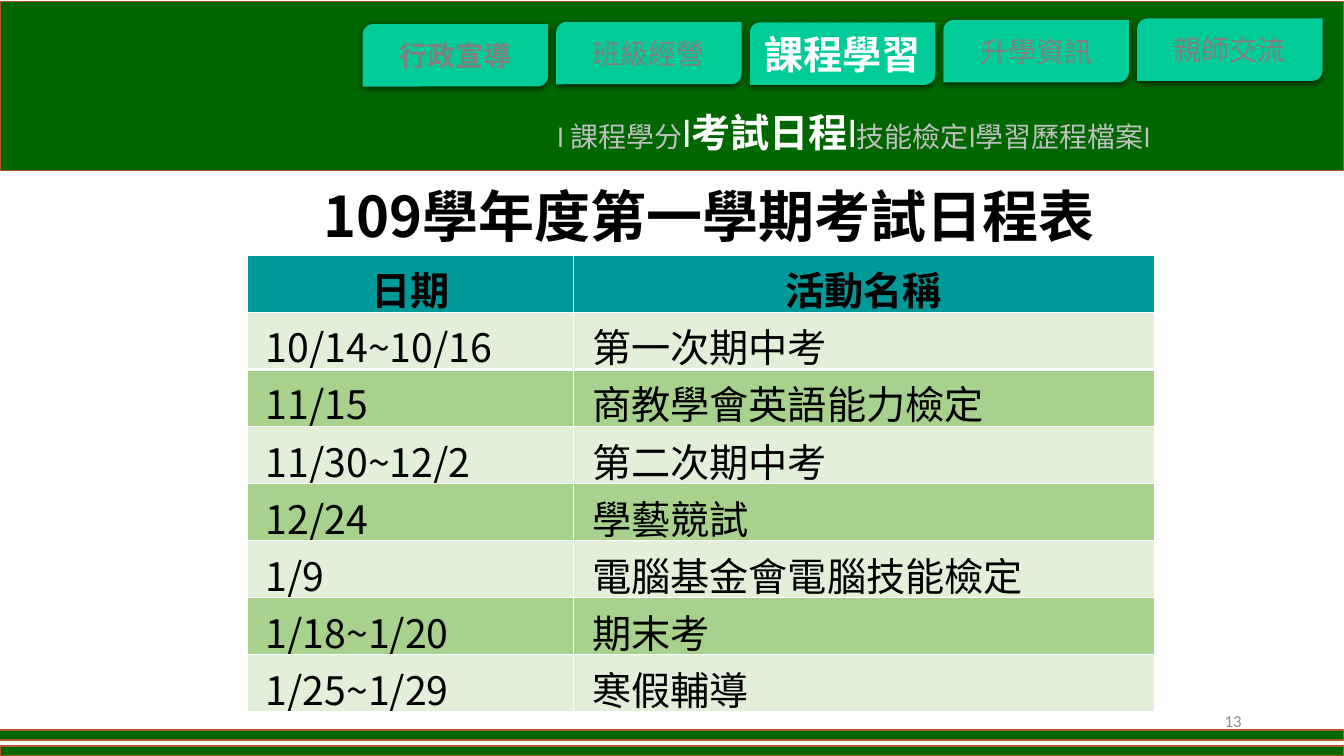
from dataclasses import dataclass

from lxml.etree import SubElement
from pptx import Presentation
from pptx.dml.color import RGBColor
from pptx.enum.shapes import MSO_SHAPE
from pptx.enum.text import MSO_ANCHOR, MSO_AUTO_SIZE, PP_ALIGN
from pptx.oxml.ns import qn
from pptx.util import Pt


@dataclass(frozen=True)
class Theme:
    band: str = "006600"
    band_line: str = "AF5C24"
    tab: str = "00CC99"
    tab_text: str = "808080"
    active: str = "FFFFFF"
    menu_text: str = "BFBFBF"
    header: str = "009999"
    light_row: str = "E2F0D9"
    dark_row: str = "A9D18E"
    border: str = "FFFFFF"
    ink: str = "000000"
    number: str = "8C8C8C"
    cjk: str = "Noto Sans CJK SC"
    latin: str = "Calibri"
    title_size: float = 40
    large: float = 28
    small: float = 20
    number_size: float = 12


class SlideBuilder:
    def __init__(self, slide, theme):
        self.slide = slide
        self.theme = theme

    def span(self, para, text, size, color, bold=False, font=None):
        run = para.add_run()
        run.text = text
        run.font.size = Pt(size)
        run.font.bold = bold
        run.font.color.rgb = RGBColor.from_string(color)
        run.font.name = font or self.theme.cjk
        SubElement(run.font._element, qn("a:ea"), typeface=run.font.name)

    def shape(self, kind, left, top, width, height, fill):
        shape = self.slide.shapes.add_shape(kind, Pt(left), Pt(top), Pt(width), Pt(height))
        shape.shadow.inherit = False
        shape.fill.solid()
        shape.fill.fore_color.rgb = RGBColor.from_string(fill)
        return shape

    def band(self, left, top, height):
        band = self.shape(MSO_SHAPE.RECTANGLE, left, top, 960, height, self.theme.band)
        band.line.color.rgb = RGBColor.from_string(self.theme.band_line)
        band.line.width = Pt(1)

    def tab(self, left, top, text, size, color, bold):
        tab = self.shape(MSO_SHAPE.ROUND_2_DIAG_RECTANGLE, left, top, 132.5, 44.6, self.theme.tab)
        tab.line.fill.background()
        effects = tab._element.spPr.find(qn("a:effectLst"))
        shadow = SubElement(effects, qn("a:outerShdw"), blurRad=str(Pt(4.5)),
                            dist=str(Pt(1.5)), dir="5400000", rotWithShape="0")
        color_node = SubElement(shadow, qn("a:srgbClr"), val=self.theme.ink)
        SubElement(color_node, qn("a:alpha"), val="63000")
        tab.text_frame.vertical_anchor = MSO_ANCHOR.MIDDLE
        para = tab.text_frame.paragraphs[0]
        para.alignment = PP_ALIGN.CENTER
        self.span(para, text, size, color, bold)

    def text(self, left, top, width, height, align=PP_ALIGN.LEFT, anchor=MSO_ANCHOR.TOP):
        box = self.slide.shapes.add_textbox(Pt(left), Pt(top), Pt(width), Pt(height))
        box.text_frame.word_wrap = True
        box.text_frame.vertical_anchor = anchor
        para = box.text_frame.paragraphs[0]
        para.alignment = align
        return para

    def title(self, left, top, width, height, text):
        title = self.slide.shapes.title
        title.left, title.top, title.width, title.height = map(Pt, (left, top, width, height))
        frame = title.text_frame
        frame.word_wrap = True
        frame.auto_size = MSO_AUTO_SIZE.SHAPE_TO_FIT_TEXT
        frame.vertical_anchor = MSO_ANCHOR.TOP
        para = frame.paragraphs[0]
        para.alignment = PP_ALIGN.LEFT
        self.span(para, text, self.theme.title_size, self.theme.ink, True)

    def cell(self, cell, text, fill, header, borders):
        properties = cell._tc.get_or_add_tcPr()
        for side, width in borders.items():
            line = SubElement(properties, qn(f"a:ln{side}"), w=str(Pt(width)))
            paint = SubElement(line, qn("a:solidFill"))
            SubElement(paint, qn("a:srgbClr"), val=self.theme.border)
        cell.fill.solid()
        cell.fill.fore_color.rgb = RGBColor.from_string(fill)
        cell.vertical_anchor = MSO_ANCHOR.MIDDLE
        cell.margin_left = Pt(7.2 if header else 13.5)
        cell.margin_top, cell.margin_bottom = Pt(3.6), Pt(-3.6)
        para = cell.text_frame.paragraphs[0]
        para.alignment = PP_ALIGN.CENTER if header else PP_ALIGN.LEFT
        self.span(para, text, self.theme.large, self.theme.ink, header)

    def table(self, left, top, widths, row_height, rows):
        frame = self.slide.shapes.add_table(len(rows), len(widths), Pt(left), Pt(top),
                                            Pt(sum(widths)), Pt(row_height * len(rows)))
        table = frame.table
        for column, width in zip(table.columns, widths):
            column.width = Pt(width)
        for index, row in enumerate(rows):
            table.rows[index].height = Pt(row_height)
            stripe = self.theme.light_row if index % 2 else self.theme.dark_row
            fill = stripe if index else self.theme.header
            # The rule under the first date is heavier
            borders = {"L": 1, "R": 1, "T": 2 if index == 2 else 1, "B": 2 if index == 1 else 1}
            for column, text in enumerate(row):
                self.cell(table.cell(index, column), text, fill, index == 0, borders)


def main():
    deck = Presentation()
    deck.slide_width, deck.slide_height = Pt(960), Pt(540)
    theme = Theme()
    page = SlideBuilder(deck.slides.add_slide(deck.slide_layouts[5]), theme)

    # Green bands
    for left, top, height in ((0, 1.2, 120.7), (0, 532.8, 7.2), (-0.5, 521.5, 7.2)):
        page.band(left, top, height)

    # Navigation tabs
    tabs = (("行政宣導", 17.2), ("班級經營", 15.6), ("課程學習", 16), ("升學資訊", 14.2), ("親師交流", 13.2))
    for index, (name, top) in enumerate(tabs):
        active = name == "課程學習"
        page.tab(259 + 138.3 * index, top, name, theme.large if active else theme.small,
                 theme.active if active else theme.tab_text, active or index == 0)

    # Section menu
    quiet = (theme.small, theme.menu_text)
    strong = (theme.large, theme.active)
    menu = page.text(391, 74, 482.5, 41)
    for separator, separator_style, name, style in (("l ", quiet, "課程學分", quiet),
                                                    ("l", strong, "考試日程", strong),
                                                    ("l", strong, "技能檢定", quiet),
                                                    ("l", quiet, "學習歷程檔案", quiet)):
        page.span(menu, separator, *separator_style, font=theme.latin)
        page.span(menu, name, *style, bold=style is strong)
    page.span(menu, "l", *quiet, font=theme.latin)

    # Exam schedule
    page.title(224, 126, 577, 55.5, "109學年度第一學期考試日程表")
    page.table(176.4, 182.2, (233.2, 414.8), 40.8, (
        ("日期", "活動名稱"),
        ("10/14~10/16", "第一次期中考"),
        ("11/15", "商教學會英語能力檢定"),
        ("11/30~12/2", "第二次期中考"),
        ("12/24", "學藝競試"),
        ("1/9", "電腦基金會電腦技能檢定"),
        ("1/18~1/20", "期末考"),
        ("1/25~1/29", "寒假輔導"),
    ))

    # Slide number
    number = page.text(678, 500.4, 216, 28.8, PP_ALIGN.RIGHT, MSO_ANCHOR.MIDDLE)
    page.span(number, "13", theme.number_size, theme.number, font=theme.latin)

    deck.save("out.pptx")


if __name__ == "__main__":
    main()
